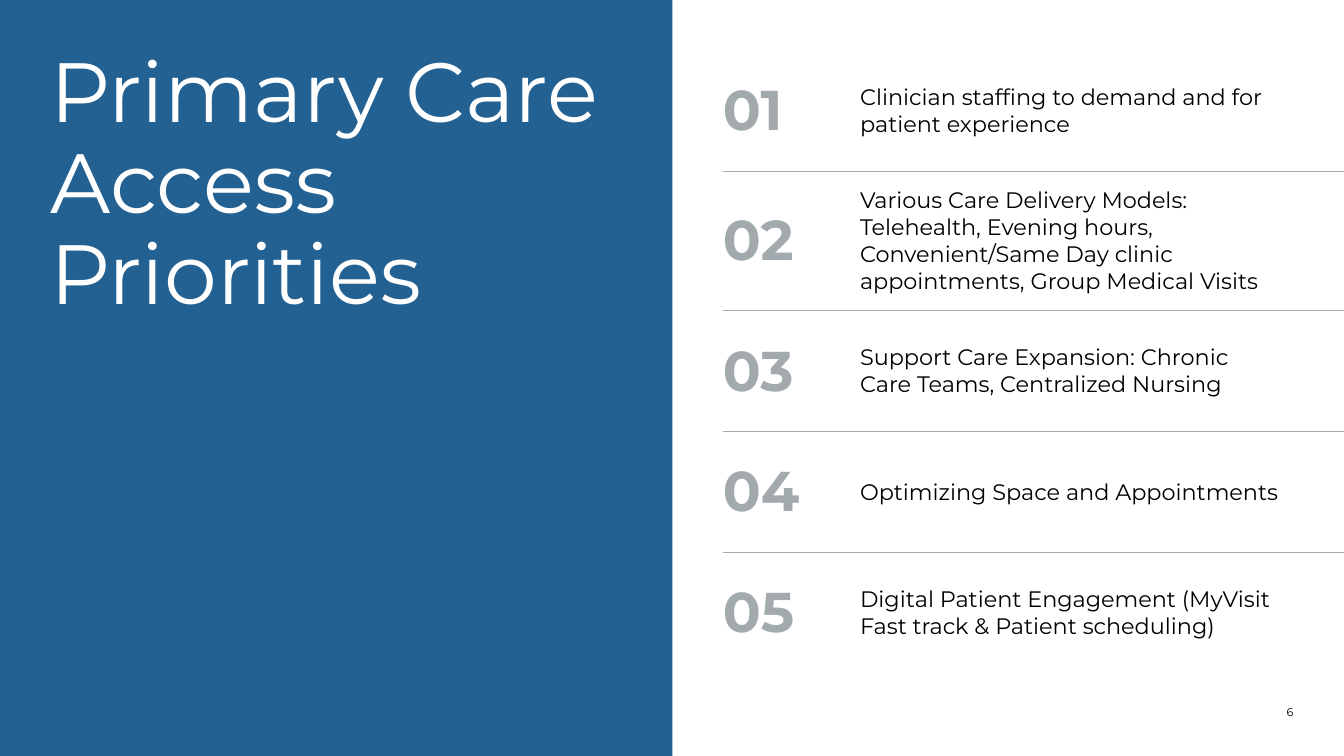
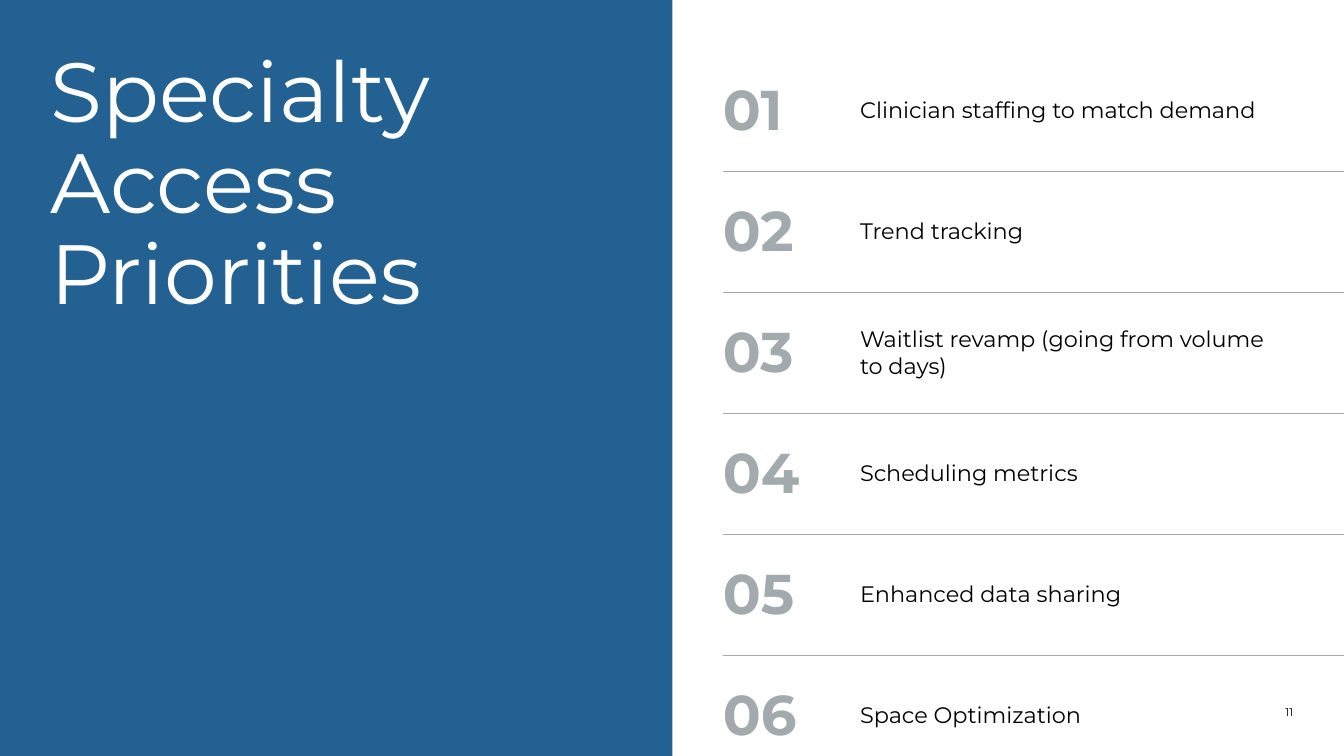
from dataclasses import dataclass
from typing import Any

import lxml.etree
import pptx
import pptx.dml.color
import pptx.enum.shapes
import pptx.enum.text
import pptx.oxml.ns
import pptx.util

# Lengths are in px, 100 px to the inch
PX = 9144
SLIDE_W, SLIDE_H = 1333, 750
PANEL_W = 667
MARGIN = 50
TABLE_X = PANEL_W + MARGIN
NUMBER_W = 121
ROW_H = 120

COLORS = {"panel": "236192", "number": "A2AAAD", "text": "000000", "white": "FFFFFF"}
FONT = "Montserrat"
ALIGN = pptx.enum.text.PP_ALIGN
ANCHOR = pptx.enum.text.MSO_ANCHOR

# Text formats: font attributes and colour name
TITLE = {"size": pptx.util.Pt(60), "bold": False, "color": "white"}
NUMBER = {"size": pptx.util.Pt(40), "bold": True, "color": "number"}
ITEM = {"size": pptx.util.Pt(16), "bold": False, "color": "text"}
PAGE = {"size": pptx.util.Pt(8), "bold": False, "color": "text"}


@dataclass(frozen=True)
class Priorities:
    title: str
    page: int
    items: tuple[str, ...]


SLIDES = (
    Priorities("Primary Care Access Priorities", 6, (
        "Clinician staffing to demand and for patient experience",
        "Various Care Delivery Models: Telehealth, Evening hours, "
        "Convenient/Same Day clinic appointments, Group Medical Visits",
        "Support Care Expansion: Chronic Care Teams, Centralized Nursing",
        "Optimizing Space and Appointments",
        "Digital Patient Engagement (MyVisit Fast track & Patient scheduling)",
    )),
    Priorities("Specialty Access Priorities", 11, (
        "Clinician staffing to match demand",
        "Trend tracking",
        "Waitlist revamp (going from volume to days)",
        "Scheduling metrics",
        "Enhanced data sharing",
        "Space Optimization",
    )),
)


def px(n: int) -> pptx.util.Emu:
    return pptx.util.Emu(n * PX)


def rgb(name: str) -> pptx.dml.color.RGBColor:
    return pptx.dml.color.RGBColor.from_string(COLORS[name])


def set_attrs(obj: Any, values: dict[str, Any]) -> None:
    for name, value in values.items():
        setattr(obj, name, value)


def set_margins(obj: Any, left: int, top: int, right: int, bottom: int) -> None:
    set_attrs(obj, {"margin_left": px(left), "margin_top": px(top),
                    "margin_right": px(right), "margin_bottom": px(bottom)})


def write(tf: Any, text: str, fmt: dict[str, Any], **paragraph: Any) -> None:
    p = tf.paragraphs[0]
    set_attrs(p, paragraph)
    r = p.add_run()
    r.text = text
    set_attrs(r.font, {k: v for k, v in fmt.items() if k != "color"} | {"name": FONT})
    r.font.color.rgb = rgb(fmt["color"])


def set_borders(cell: Any, top: bool, bottom: bool) -> None:
    tc_pr = cell._tc.get_or_add_tcPr()
    qn = pptx.oxml.ns.qn
    sides = {"a:lnL": False, "a:lnR": False, "a:lnT": top, "a:lnB": bottom}
    for tag, shown in sides.items():
        ln = lxml.etree.SubElement(tc_pr, qn(tag), w=str(pptx.util.Pt(0.5)))
        fill = lxml.etree.SubElement(ln, qn("a:solidFill" if shown else "a:noFill"))
        if shown:
            lxml.etree.SubElement(fill, qn("a:srgbClr"), val=COLORS["number"])


def add_title(s: Any, text: str) -> None:
    sp = s.shapes.title
    set_attrs(sp, {"left": px(MARGIN), "top": px(MARGIN), "width": px(567), "height": px(146)})
    tf = sp.text_frame
    set_margins(tf, 0, 0, 0, 0)
    set_attrs(tf, {"word_wrap": True, "vertical_anchor": ANCHOR.TOP,
                   "auto_size": pptx.enum.text.MSO_AUTO_SIZE.NONE})
    write(tf, text, TITLE, alignment=ALIGN.LEFT, line_spacing=0.9)


def add_panel(s: Any) -> None:
    sp = s.shapes.add_shape(pptx.enum.shapes.MSO_SHAPE.RECTANGLE, 0, 0, px(PANEL_W), px(SLIDE_H))
    sp.shadow.inherit = False
    sp.fill.solid()
    sp.fill.fore_color.rgb = rgb("panel")
    sp.line.fill.background()
    # Keep the panel behind the title
    s.shapes.title.element.addprevious(sp.element)


def add_page_number(s: Any, page: int) -> None:
    tf = s.shapes.add_textbox(px(1023), px(700), px(260), px(13)).text_frame
    set_margins(tf, 0, 0, 0, 0)
    tf.word_wrap = True
    write(tf, str(page), PAGE, alignment=ALIGN.RIGHT)


def add_items(s: Any, items: tuple[str, ...]) -> None:
    n = len(items)
    width = SLIDE_W - TABLE_X
    table = s.shapes.add_table(n, 2, px(TABLE_X), px(MARGIN), px(width), px(n * ROW_H)).table
    set_attrs(table, {"first_row": False, "horz_banding": False})
    for column, w in zip(table.columns, (NUMBER_W, width - NUMBER_W)):
        column.width = px(w)
    for i, item in enumerate(items):
        table.rows[i].height = px(ROW_H)
        columns = ((f"{i + 1:02}", NUMBER, 0, 15), (item, ITEM, 15, 65))
        for j, (text, fmt, left, right) in enumerate(columns):
            cell = table.cell(i, j)
            cell.vertical_anchor = ANCHOR.MIDDLE
            set_margins(cell, left, 15, right, 15)
            set_borders(cell, top=i > 0, bottom=i < n - 1)
            cell.fill.background()
            write(cell.text_frame, text, fmt)


def main() -> None:
    prs = pptx.Presentation()
    set_attrs(prs, {"slide_width": px(SLIDE_W), "slide_height": px(SLIDE_H)})
    for content in SLIDES:
        s = prs.slides.add_slide(prs.slide_layouts[5])
        add_panel(s)
        add_title(s, content.title)
        add_items(s, content.items)
        add_page_number(s, content.page)
    prs.save("out.pptx")


if __name__ == "__main__":
    main()
